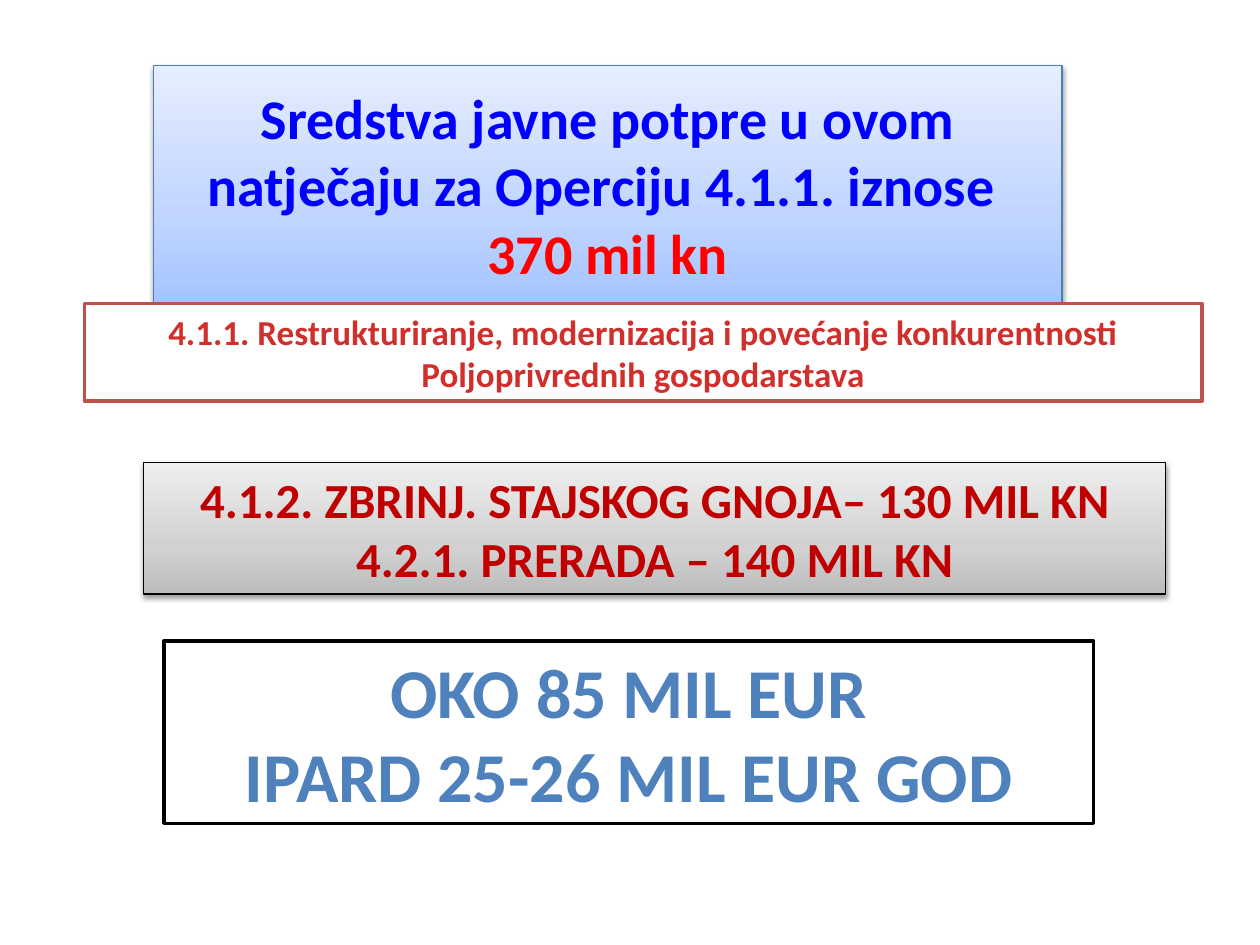
import pptx
import pptx.dml.color
import pptx.enum.shapes
import pptx.enum.text
import pptx.oxml
import pptx.oxml.ns
import pptx.util

Pt = pptx.util.Pt


def rgb(value):
    return pptx.dml.color.RGBColor.from_string(value)


def shade(box, stops):
    """Three-stop vertical gradient, first colour at the bottom, and a soft shadow."""
    ns = pptx.oxml.ns.nsdecls("a")
    stop_xml = "".join(
        f'<a:gs pos="{place * 1000}"><a:srgbClr val="{color}"/></a:gs>'
        for place, color in zip((0, 35, 100), stops))
    gradient = pptx.oxml.parse_xml(
        f'<a:gradFill {ns} rotWithShape="1"><a:gsLst>{stop_xml}</a:gsLst>'
        '<a:lin ang="16200000" scaled="0"/></a:gradFill>')
    shadow = pptx.oxml.parse_xml(
        f'<a:outerShdw {ns} blurRad="40000" dist="20000" dir="5400000" rotWithShape="0">'
        '<a:srgbClr val="000000"><a:alpha val="38000"/></a:srgbClr></a:outerShdw>')
    properties = box._element.spPr
    solid = properties.find(pptx.oxml.ns.qn("a:solidFill"))
    properties.replace(solid, gradient)
    properties.find(pptx.oxml.ns.qn("a:effectLst")).append(shadow)


deck = pptx.Presentation()
deck.slide_width, deck.slide_height = Pt(720), Pt(540)
slide = deck.slides.add_slide(deck.slide_layouts[6])

# Left, top, width, height; gradient; outline and its width; text size and colour; paragraphs
panels = [
    ((87.8, 37.4, 519.1, 136.1), ("A4C4FF", "BFD4FF", "E6EEFF"), "4B7EBC", 0.75, 32, "0000FF",
     ["Sredstva javne potpre u ovom natječaju za Operciju 4.1.1. iznose "]),
    ((48.2, 173.5, 638.6, 55.7), None, "C0504D", 2, 20, "D02F2C",
     ["4.1.1. Restrukturiranje, modernizacija i povećanje konkurentnosti",
      "Poljoprivrednih gospodarstava"]),
    ((82.1, 264.3, 583.9, 75.1), ("BDBDBD", "D1D1D1", "EEEEEE"), "000000", 0.75, 28, "C00000",
     ["4.1.2. ZBRINJ. STAJSKOG GNOJA– 130 MIL KN", "4.2.1. PRERADA – 140 MIL KN"]),
    ((93.6, 366.3, 531.4, 104.2), None, "000000", 2, 40, "4F81BD",
     ["OKO 85 MIL EUR", "IPARD 25-26 MIL EUR GOD"]),
]

panel_texts = []
for bounds, stops, outline, weight, size, color, lines in panels:
    panel = slide.shapes.add_shape(
        pptx.enum.shapes.MSO_SHAPE.RECTANGLE, *[Pt(length) for length in bounds])
    panel.shadow.inherit = False
    panel.fill.solid()
    panel.fill.fore_color.rgb = rgb("FFFFFF")
    panel.line.color.rgb = rgb(outline)
    panel.line.width = Pt(weight)
    if stops:
        shade(panel, stops)

    text = panel.text_frame
    text.word_wrap = True
    text.vertical_anchor = pptx.enum.text.MSO_ANCHOR.MIDDLE
    text.text = "\n".join(lines)
    for paragraph in text.paragraphs:
        paragraph.alignment = pptx.enum.text.PP_ALIGN.CENTER
        paragraph.font.name = "Calibri"
        paragraph.font.size = Pt(size)
        paragraph.font.bold = True
        paragraph.font.color.rgb = rgb(color)
    panel_texts.append(text)

# Amount in red on its own line of the title
title = panel_texts[0].paragraphs[0]
title.add_line_break()
amount = title.add_run()
amount.text = "370 mil kn"
amount.font.color.rgb = rgb("FF0000")

deck.save("out.pptx")
